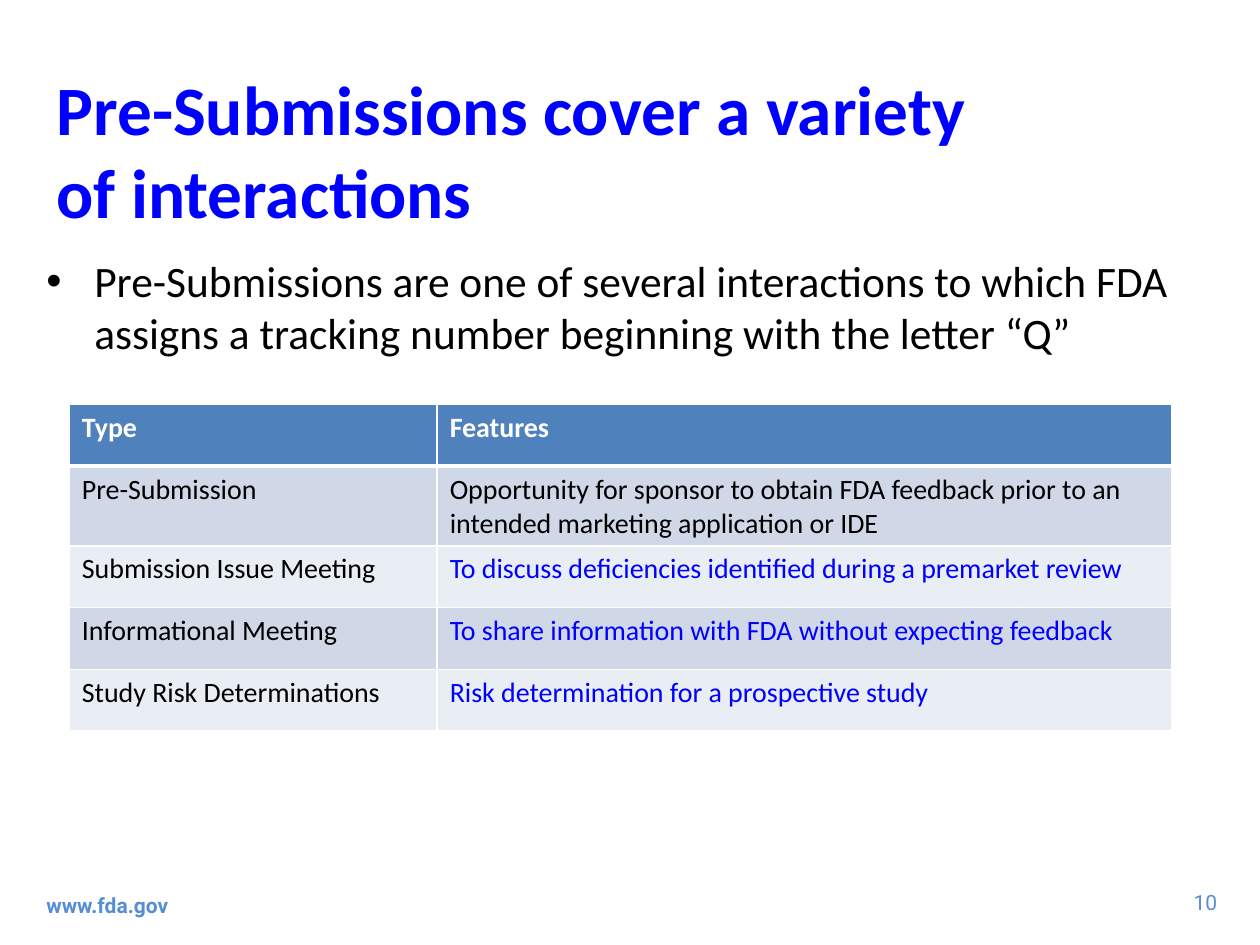
from lxml import etree
from pptx import Presentation
from pptx.dml.color import RGBColor
from pptx.enum.text import MSO_ANCHOR, PP_ALIGN
from pptx.oxml.ns import qn
from pptx.util import Inches, Pt

TOP, MIDDLE = MSO_ANCHOR.TOP, MSO_ANCHOR.MIDDLE
LEFT, RIGHT = PP_ALIGN.LEFT, PP_ALIGN.RIGHT
BLUE, FOOTER, BLACK, WHITE = "0000FF", "558ED5", "000000", "FFFFFF"
HEADER_FILL, BAND_FILLS = "4F81BD", ("D0D8E8", "E9EDF4")

TITLE = "Pre-Submissions cover a variety of interactions"
BODY = ("Pre-Submissions are one of several interactions to which FDA "
        "assigns a tracking number beginning with the letter “Q”")
SITE, PAGE = "www.fda.gov", "10"
ROWS = [
    ("Type", "Features"),
    ("Pre-Submission", "Opportunity for sponsor to obtain FDA feedback prior to an "
                       "intended marketing application or IDE"),
    ("Submission Issue Meeting", "To discuss deficiencies identified during a premarket review"),
    ("Informational Meeting", "To share information with FDA without expecting feedback"),
    ("Study Risk Determinations", "Risk determination for a prospective study"),
]
COL_WIDTHS, ROW_HEIGHT = (2.92, 5.83), 0.49


def rgb(color):
    return RGBColor.from_string(color)


def style(p, size, color, bold=False, font="Calibri"):
    for r in p.runs:
        r.font.size, r.font.name, r.font.bold = Pt(size), font, bold
        r.font.color.rgb = rgb(color)


def add_text(slide, box, text, size, color, bold=False, font="Calibri",
             anchor=TOP, align=LEFT, wrap=True):
    tf = slide.shapes.add_textbox(*map(Inches, box)).text_frame
    tf.word_wrap, tf.vertical_anchor = wrap, anchor
    p = tf.paragraphs[0]
    p.text, p.alignment = text, align
    style(p, size, color, bold, font)
    return p


def add_bullet(p, indent):
    pPr = p._p.get_or_add_pPr()
    pPr.set("marL", str(Inches(indent)))
    pPr.set("indent", str(-Inches(indent)))
    etree.SubElement(pPr, qn("a:buFont")).set("typeface", "Arial")
    etree.SubElement(pPr, qn("a:buChar")).set("char", "•")


def add_borders(cell, widths):
    """Draw white cell borders; widths maps each side to points."""
    tcPr = cell._tc.get_or_add_tcPr()
    for side, width in widths.items():
        ln = etree.SubElement(tcPr, qn("a:ln" + side), w=str(Pt(width)))
        fill = etree.SubElement(ln, qn("a:solidFill"))
        etree.SubElement(fill, qn("a:srgbClr"), val=WHITE)


def add_type_table(slide, left, top):
    size = (sum(COL_WIDTHS), ROW_HEIGHT * len(ROWS))
    table = slide.shapes.add_table(len(ROWS), len(COL_WIDTHS),
                                   *map(Inches, (left, top, *size))).table
    for col, width in zip(table.columns, COL_WIDTHS):
        col.width = Inches(width)
    for i, row in enumerate(ROWS):
        header = i == 0
        for j, text in enumerate(row):
            cell = table.cell(i, j)
            add_borders(cell, {"L": 1, "R": 1, "T": 3 if i == 1 else 1, "B": 3 if header else 1})
            cell.fill.solid()
            cell.fill.fore_color.rgb = rgb(HEADER_FILL if header else BAND_FILLS[(i - 1) % 2])
            cell.text = text
            color = WHITE if header else BLUE if j == 1 and i > 1 else BLACK
            style(cell.text_frame.paragraphs[0], 16, color, bold=header)


def main():
    prs = Presentation()
    prs.slide_width, prs.slide_height = Inches(10), Inches(7.5)
    slide = prs.slides.add_slide(prs.slide_layouts[6])
    add_text(slide, (9.35, 7.01, 0.41, 0.3), PAGE, 12, FOOTER, font="Roboto",
             align=RIGHT, wrap=False)
    add_text(slide, (0.35, 0.59, 7.72, 1.19), TITLE, 39.6, BLUE, bold=True, anchor=MIDDLE)
    add_bullet(add_text(slide, (0.27, 1.97, 9.31, 0.84), BODY, 24.8, BLACK), 0.38)
    add_text(slide, (0.27, 6.98, 3.17, 0.4), SITE, 12, FOOTER, bold=True,
             font="Roboto", anchor=MIDDLE)
    add_type_table(slide, 0.55, 3.21)
    prs.save("out.pptx")


if __name__ == "__main__":
    main()
